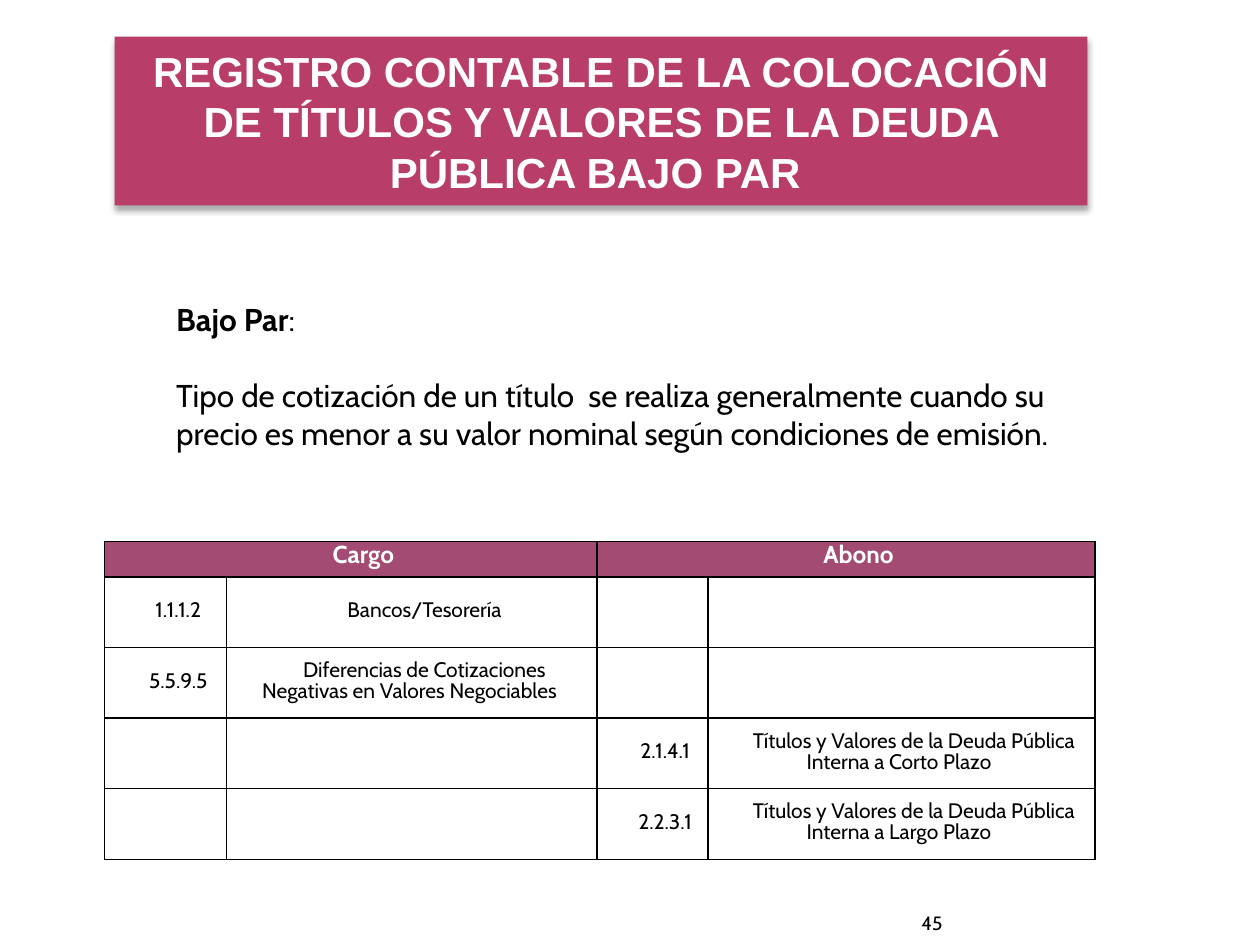
from dataclasses import dataclass

from lxml.etree import SubElement
from pptx import Presentation
from pptx.dml.color import RGBColor
from pptx.enum.text import MSO_ANCHOR, MSO_AUTO_SIZE, PP_ALIGN
from pptx.oxml import parse_xml
from pptx.oxml.ns import nsdecls, qn
from pptx.util import Emu, Inches, Pt

SLIDE_WIDTH, SLIDE_HEIGHT = Inches(10), Inches(7.5)
BLACK, WHITE, ROSE, PLUM = "000000", "FFFFFF", "B83D68", "A34B73"
COLUMN_SHARES = (9.7, 29.4, 8.8, 30.7)
HEADER_SHARE, ENTRY_SHARE = 3.73, 7.47


@dataclass(frozen=True)
class Area:
    left: float
    top: float
    width: float
    height: float

    def place(self) -> tuple[Emu, Emu, Emu, Emu]:
        return (across(self.left), down(self.top),
                across(self.width), down(self.height))


@dataclass(frozen=True)
class Entry:
    account: str
    name: str
    side: int


ENTRIES = (
    Entry("1.1.1.2", "Bancos/Tesorería", 0),
    Entry("5.5.9.5", "Diferencias de Cotizaciones Negativas en Valores Negociables ", 0),
    Entry("2.1.4.1", "Títulos y Valores de la Deuda Pública Interna a Corto Plazo ", 1),
    Entry("2.2.3.1", "Títulos y Valores de la Deuda Pública Interna a Largo Plazo ", 1),
)


def across(percent: float) -> Emu:
    return Emu(round(SLIDE_WIDTH * percent / 100))


def down(percent: float) -> Emu:
    return Emu(round(SLIDE_HEIGHT * percent / 100))


def color(value: str) -> RGBColor:
    return RGBColor.from_string(value)


def set_font(para, size: float, value: str = BLACK, bold: bool = False, name: str = "Cabin") -> None:
    para.font.name = name
    para.font.size = Pt(size)
    para.font.bold = bold
    para.font.color.rgb = color(value)


def draw_title(page, area: Area, text: str) -> None:
    title = page.shapes.title
    title.left, title.top, title.width, title.height = area.place()
    properties = title._element.spPr
    properties.append(parse_xml(
        f'<a:prstGeom {nsdecls("a")} prst="roundRect"><a:avLst/></a:prstGeom>'))
    title.fill.solid()
    title.fill.fore_color.rgb = color(ROSE)
    properties.append(parse_xml(
        f'<a:effectLst {nsdecls("a")}><a:outerShdw blurRad="{Pt(3.5)}" dist="{Pt(2.2)}" '
        f'dir="5400000" rotWithShape="0"><a:srgbClr val="{BLACK}"><a:alpha val="32000"/>'
        '</a:srgbClr></a:outerShdw></a:effectLst>'))
    frame = title.text_frame
    frame.auto_size = MSO_AUTO_SIZE.NONE
    frame.word_wrap = True
    frame.vertical_anchor = MSO_ANCHOR.MIDDLE
    frame.text = text
    para = frame.paragraphs[0]
    para.alignment = PP_ALIGN.CENTER
    set_font(para, 24, WHITE, True, "Arial")


def draw_definition(page, area: Area, term: str, meaning: str) -> None:
    frame = page.shapes.add_textbox(*area.place()).text_frame
    frame.word_wrap = True
    heading = frame.paragraphs[0]
    set_font(heading, 18)
    span = heading.add_run()
    span.text = term
    span.font.bold = True
    heading.add_run().text = ":"
    body = frame.add_paragraph()
    body.text = meaning
    body.space_before = Pt(22)
    set_font(body, 18)


def draw_page_number(page, area: Area, number: str) -> None:
    frame = page.shapes.add_textbox(*area.place()).text_frame
    frame.margin_left = frame.margin_right = frame.margin_top = frame.margin_bottom = 0
    frame.word_wrap = True
    frame.vertical_anchor = MSO_ANCHOR.BOTTOM
    para = frame.paragraphs[0]
    para.text = number
    para.alignment = PP_ALIGN.RIGHT
    set_font(para, 11)


def add_borders(cell) -> None:
    properties = cell._tc.get_or_add_tcPr()
    for side in ("a:lnL", "a:lnR", "a:lnT", "a:lnB"):
        line = SubElement(properties, qn(side), w=str(Pt(1)))
        fill = SubElement(line, qn("a:solidFill"))
        SubElement(fill, qn("a:srgbClr"), val=BLACK)


def format_cell(cell, text: str, header: bool) -> None:
    add_borders(cell)
    cell.margin_left = cell.margin_right = Inches(0.05)
    cell.margin_top = cell.margin_bottom = 0
    cell.vertical_anchor = MSO_ANCHOR.MIDDLE
    if header:
        cell.fill.solid()
        cell.fill.fore_color.rgb = color(PLUM)
    else:
        cell.fill.background()
    para = cell.text_frame.paragraphs[0]
    if text:
        para.text = text
    para.alignment = PP_ALIGN.CENTER
    para.line_spacing = Pt(12)
    para.space_after = Pt(5)
    para._p.get_or_add_pPr().set("indent", str(Inches(0.2)))
    set_font(para, 14 if header else 12, WHITE if header else BLACK, header)


def draw_ledger(page, left: float, top: float, entries: tuple[Entry, ...]) -> None:
    row_shares = (HEADER_SHARE,) + (ENTRY_SHARE,) * len(entries)
    area = Area(left, top, sum(COLUMN_SHARES), sum(row_shares))
    table = page.shapes.add_table(len(row_shares), len(COLUMN_SHARES), *area.place()).table
    table.first_row = table.horz_banding = False
    for column, share in zip(table.columns, COLUMN_SHARES):
        column.width = across(share)
    for row, share in zip(table.rows, row_shares):
        row.height = down(share)

    contents = [["Cargo", "", "Abono", ""]]
    for entry in entries:
        pair = [entry.account, entry.name]
        contents.append(["", ""] + pair if entry.side else pair + ["", ""])
    for row_index, texts in enumerate(contents):
        for column_index, text in enumerate(texts):
            format_cell(table.cell(row_index, column_index), text, row_index == 0)
    for first in (0, 2):
        table.cell(0, first).merge(table.cell(0, first + 1))


def main() -> None:
    deck = Presentation()
    deck.slide_width, deck.slide_height = SLIDE_WIDTH, SLIDE_HEIGHT
    page = deck.slides.add_slide(deck.slide_layouts[5])
    draw_title(page, Area(9.1, 3.87, 77.2, 17.87),
               "REGISTRO CONTABLE DE LA COLOCACIÓN DE TÍTULOS Y VALORES "
               "DE LA DEUDA PÚBLICA BAJO PAR ")
    draw_definition(page, Area(13, 31.07, 75.6, 25.6), "Bajo Par",
                    "Tipo de cotización de un título  se realiza generalmente cuando su "
                    "precio es menor a su valor nominal según condiciones de emisión.")
    draw_ledger(page, 8.3, 57.33, ENTRIES)
    draw_page_number(page, Area(68.4, 95.6, 6.4, 3.33), "45")
    deck.save("out.pptx")


if __name__ == "__main__":
    main()
